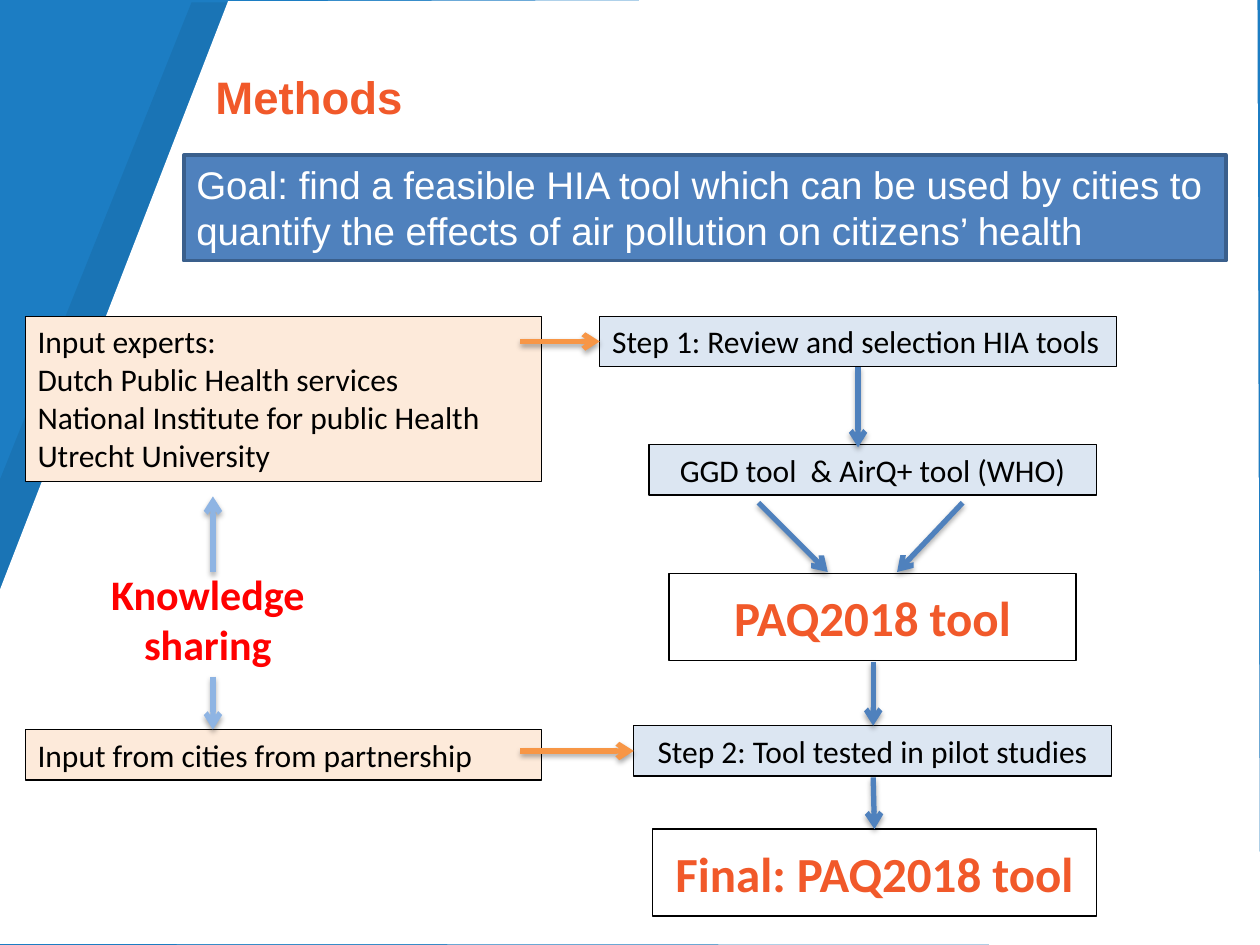
from lxml import etree
from pptx import Presentation
from pptx.dml.color import RGBColor
from pptx.enum.shapes import MSO_CONNECTOR, MSO_SHAPE
from pptx.enum.text import MSO_ANCHOR, MSO_AUTO_SIZE, PP_ALIGN
from pptx.oxml.ns import qn
from pptx.util import Inches, Pt

RECTANGLE = MSO_SHAPE.RECTANGLE
STRAIGHT = MSO_CONNECTOR.STRAIGHT
LEFT, CENTER = PP_ALIGN.LEFT, PP_ALIGN.CENTER
TOP, MIDDLE = MSO_ANCHOR.TOP, MSO_ANCHOR.MIDDLE
GROW, FIXED = MSO_AUTO_SIZE.SHAPE_TO_FIT_TEXT, MSO_AUTO_SIZE.NONE

COLORS = {
    "background": "1C7DC3",
    "white": "FFFFFF",
    "black": "000000",
    "accent": "F1592A",
    "goal": "4F81BD",
    "goal_edge": "3A5F8C",
    "step": "DCE6F2",
    "input": "FDEADA",
    "input_arrow": "F79646",
    "sharing": "FF0000",
    "sharing_arrow": "8EB4E3",
}


def color(name):
    return RGBColor.from_string(COLORS[name])


def add_element(parent, tag, **attributes):
    element = etree.SubElement(parent, qn(tag))
    for key, value in attributes.items():
        element.set(key, str(value))
    return element


def write_text(frame, text, size=18, font="Calibri", ink="black", bold=False,
               align=LEFT, anchor=TOP, fit=GROW):
    frame.word_wrap = True
    frame.auto_size = fit
    frame.vertical_anchor = anchor
    for index, line in enumerate(text.split("\n")):
        para = frame.paragraphs[0] if index == 0 else frame.add_paragraph()
        para.alignment = align
        span = para.add_run()
        span.text = line
        span.font.name = font
        span.font.size = Pt(size)
        span.font.bold = bold
        span.font.color.rgb = color(ink)


def add_panel(page, points, fill, opacity=100):
    builder = page.shapes.build_freeform(*map(Inches, points[0]), scale=1.0)
    builder.add_line_segments([tuple(map(Inches, point)) for point in points[1:]])
    panel = builder.convert_to_shape()
    panel.shadow.inherit = False
    panel.line.fill.background()
    panel.fill.solid()
    panel.fill.fore_color.rgb = color(fill)
    if opacity < 100:
        tint = panel.element.spPr.find(".//" + qn("a:srgbClr"))
        add_element(tint, "a:alpha", val=opacity * 1000)


def add_title(page, text):
    title = page.shapes.title
    title.left, title.top = Inches(1.61), Inches(0.14)
    title.width, title.height = Inches(7.74), Inches(1.25)
    write_text(title.text_frame, text, size=26, font="Arial", ink="accent",
               bold=True, anchor=MIDDLE, fit=FIXED)
    title.element.getparent().append(title.element)


def add_box(page, place, text, fill=None, edge="black", weight=0.75, **text_format):
    box = page.shapes.add_shape(RECTANGLE, *map(Inches, place))
    box.shadow.inherit = False
    if fill:
        box.fill.solid()
        box.fill.fore_color.rgb = color(fill)
    else:
        box.fill.background()
    box.line.color.rgb = color(edge)
    box.line.width = Pt(weight)
    write_text(box.text_frame, text, **text_format)


def add_label(page, place, text, **text_format):
    label = page.shapes.add_textbox(*map(Inches, place))
    write_text(label.text_frame, text, **text_format)


def add_arrow(page, start, end, ink):
    arrow = page.shapes.add_connector(STRAIGHT, *map(Inches, start + end))
    arrow.line.color.rgb = color(ink)
    arrow.line.width = Pt(3)
    add_element(arrow.line._get_or_add_ln(), "a:tailEnd", type="arrow")
    effects = add_element(arrow.element.spPr, "a:effectLst")
    shadow = add_element(effects, "a:outerShdw", blurRad=Pt(3.1), dist=Pt(1.8),
                         dir=90 * 60000, rotWithShape=0)
    tint = add_element(shadow, "a:srgbClr", val=COLORS["black"])
    add_element(tint, "a:alpha", val=35000)


def main():
    deck = Presentation()
    deck.slide_width, deck.slide_height = Inches(10), Inches(7.5)
    page = deck.slides.add_slide(deck.slide_layouts[5])
    page.background.fill.solid()
    page.background.fill.fore_color.rgb = color("background")

    add_panel(page, [(9.98, 0.01), (10, 7.5), (-1.48, 7.49), (1.52, 0.02)],
              "black", opacity=7)
    add_panel(page, [(9.98, -0.01), (10, 7.5), (-1.09, 7.49), (1.81, 0.01)], "white")
    add_title(page, "Methods")
    add_box(page, (1.46, 1.23, 8.27, 0.84),
            "Goal: find a feasible HIA tool which can be used by cities to "
            "quantify the effects of air pollution on citizens’ health",
            fill="goal", edge="goal_edge", weight=2, size=22, font="Arial", ink="white")

    for place, text, align in [
        ((4.76, 2.51, 4.1, 0.4), "Step 1: Review and selection HIA tools", LEFT),
        ((5.15, 3.53, 3.55, 0.4), "GGD tool  & AirQ+ tool (WHO)", CENTER),
        ((5.03, 5.76, 3.79, 0.4), "Step 2: Tool tested in pilot studies", CENTER),
    ]:
        add_box(page, place, text, fill="step", align=align)

    for place, text in [
        ((0.2, 2.51, 4.1, 1.31),
         "Input experts:\nDutch Public Health services\n"
         "National Institute for public Health Utrecht University"),
        ((0.2, 5.79, 4.1, 0.4), "Input from cities from partnership"),
    ]:
        add_box(page, place, text, fill="input")

    for place, text in [
        ((5.31, 4.55, 3.23, 0.69), "PAQ2018 tool"),
        ((5.18, 6.58, 3.52, 0.69), "Final: PAQ2018 tool"),
    ]:
        add_box(page, place, text, size=28, ink="accent", bold=True,
                align=CENTER, anchor=MIDDLE, fit=FIXED)

    add_label(page, (0.35, 4.46, 2.6, 0.91), "Knowledge sharing",
              size=24, ink="sharing", bold=True, align=CENTER)

    for start, end, ink in [
        ((6.81, 2.91), (6.81, 3.55), "goal"),
        ((6.02, 3.99), (6.57, 4.54), "goal"),
        ((7.64, 3.99), (7.12, 4.54), "goal"),
        ((6.93, 5.25), (6.93, 5.76), "goal"),
        ((6.93, 6.17), (6.94, 6.58), "goal"),
        ((4.13, 2.71), (4.76, 2.71), "input_arrow"),
        ((4.13, 5.96), (5.03, 5.96), "input_arrow"),
        ((1.69, 4.54), (1.69, 3.94), "sharing_arrow"),
        ((1.69, 5.37), (1.69, 5.79), "sharing_arrow"),
    ]:
        add_arrow(page, start, end, ink)

    deck.save("out.pptx")


if __name__ == "__main__":
    main()
